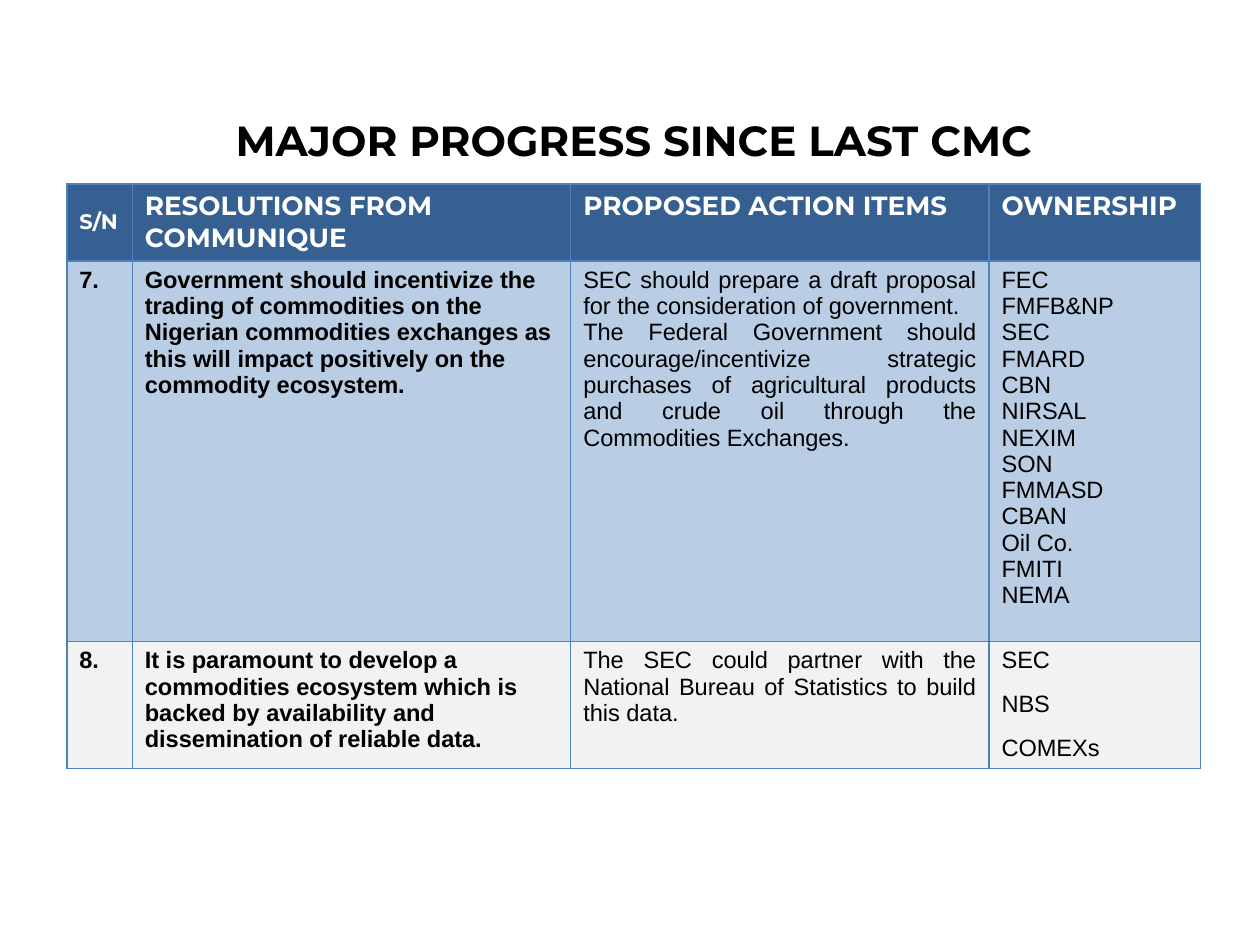
from lxml import etree
from pptx import Presentation
from pptx.dml.color import RGBColor
from pptx.enum.text import MSO_ANCHOR, PP_ALIGN
from pptx.oxml.ns import qn
from pptx.util import Inches, Pt

MIDDLE, TOP = MSO_ANCHOR.MIDDLE, MSO_ANCHOR.TOP
LEFT, CENTER, JUSTIFY = PP_ALIGN.LEFT, PP_ALIGN.CENTER, PP_ALIGN.JUSTIFY

# Content: each cell is a list of paragraphs
TITLE = "MAJOR PROGRESS SINCE LAST CMC"
ROWS = [
    [["S/N"], ["RESOLUTIONS FROM COMMUNIQUE"], ["PROPOSED ACTION ITEMS"],
     ["OWNERSHIP"]],
    [["7."],
     ["Government should incentivize the trading of commodities on the "
      "Nigerian commodities exchanges as this will impact positively on "
      "the commodity ecosystem."],
     ["SEC should prepare a draft proposal for the consideration of "
      "government. ",
      "The Federal Government should encourage/incentivize strategic "
      "purchases of agricultural products and crude oil through the "
      "Commodities Exchanges."],
     ["FEC", "FMFB&NP", "SEC", "FMARD", "CBN", "NIRSAL", "NEXIM", "SON",
      "FMMASD", "CBAN", "Oil Co.", "FMITI", "NEMA"]],
    [["8."],
     ["It is paramount to develop a commodities ecosystem which is backed "
      "by availability and dissemination of reliable data."],
     ["The SEC could partner with the National Bureau of Statistics to "
      "build this data."],
     ["SEC", "NBS", "COMEXs"]],
]
WIDTHS = [0.52, 3.48, 3.32, 1.68]
HEIGHTS = [0.61, 3.02, 1.01]
FILLS = ["376092", "B9CDE5", "F2F2F2"]
GAPS = [0, 0, 10]  # points between the paragraphs of each row
BORDER = "4F81BD"


def color(code):
    return RGBColor.from_string(code)


def style(para, face, size, code, bold, align):
    para.alignment = align
    font = para.font
    font.name, font.size, font.bold = face, Pt(size), bold
    font.color.rgb = color(code)


def edge(cell):
    props = cell._tc.get_or_add_tcPr()
    for i, side in enumerate(("a:lnL", "a:lnR", "a:lnT", "a:lnB")):
        line = etree.Element(qn(side), w=str(Pt(1)))
        fill = etree.SubElement(line, qn("a:solidFill"))
        etree.SubElement(fill, qn("a:srgbClr"), val=BORDER)
        props.insert(i, line)


def fill_cell(cell, lines, row, col):
    cell.fill.solid()
    cell.fill.fore_color.rgb = color(FILLS[row])
    edge(cell)
    head = row == 0
    cell.vertical_anchor = MIDDLE if head and col == 0 else TOP
    cell.text_frame.text = "\n".join(lines)
    for i, para in enumerate(cell.text_frame.paragraphs):
        if head:
            style(para, "Montserrat", 15 if col else 12, "FFFFFF", True, LEFT)
        else:
            align = JUSTIFY if col == 2 else LEFT
            style(para, "Arial", 13.5, "000000", col < 2, align)
        if i and GAPS[row]:
            para.space_before = Pt(GAPS[row])


def main():
    prs = Presentation()
    prs.slide_width, prs.slide_height = Inches(10), Inches(7.5)
    slide = prs.slides.add_slide(prs.slide_layouts[5])

    # Title
    title = slide.shapes.title
    title.left, title.top = Inches(0.53), Inches(0.83)
    title.width, title.height = Inches(9), Inches(0.55)
    title.text_frame.text = TITLE
    title.text_frame.vertical_anchor = MIDDLE
    style(title.text_frame.paragraphs[0], "Montserrat", 24, "000000", True,
          CENTER)

    # Table
    table = slide.shapes.add_table(
        len(ROWS), len(WIDTHS), Inches(0.53), Inches(1.46),
        Inches(sum(WIDTHS)), Inches(sum(HEIGHTS))).table
    for column, width in zip(table.columns, WIDTHS):
        column.width = Inches(width)
    for r, (cells, height) in enumerate(zip(ROWS, HEIGHTS)):
        table.rows[r].height = Inches(height)
        for c, lines in enumerate(cells):
            fill_cell(table.cell(r, c), lines, r, c)

    prs.save("out.pptx")


if __name__ == "__main__":
    main()
